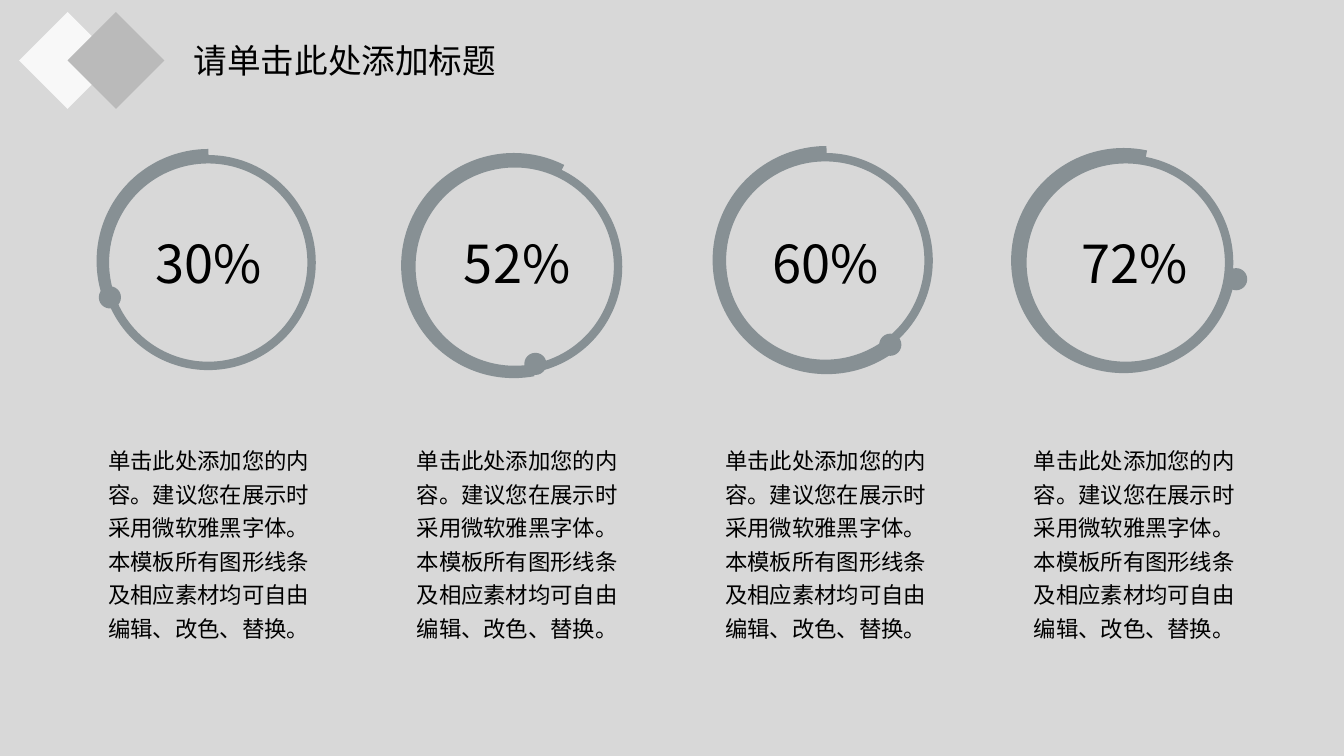
from dataclasses import dataclass

from lxml.etree import SubElement
from pptx import Presentation
from pptx.dml.color import RGBColor as Color
from pptx.enum.shapes import MSO_SHAPE as Preset
from pptx.enum.text import MSO_ANCHOR as Anchor, PP_ALIGN as Align
from pptx.oxml.ns import qn
from pptx.util import Inches, Pt


@dataclass(frozen=True)
class Theme:
    font: str = "Noto Sans CJK SC"
    text: str = "000000"
    page: str = "F8F8F8"
    panel: str = "D8D8D8"
    diamond: str = "BABABA"
    ring: str = "879094"
    title_size: float = 24
    percent_size: float = 37.4
    body_size: float = 16
    ring_width: float = 6


theme = Theme()
WIDTH, HEIGHT = 13.33, 7.5
COLUMN_CENTER, COLUMN_PITCH = 2.07, 3.06
BODY_WIDTH, PERCENT_WIDTH = 2.15, 1.07
RING_SIZE, DOT_SIZE, DIAMOND_SIZE = 2.05, 0.22, 0.68
ADJUSTMENT_PER_DEGREE = 0.6
BODY = "单击此处添加您的内容。建议您在展示时采用微软雅黑字体。本模板所有图形线条及相应素材均可自由编辑、改色、替换。"

# percent, ring corner, dot corner, arc corner, arc size, arc start and end in degrees
gauges = [
    ("30%", (1.04, 1.58), (0.98, 2.84), (1.00, 1.52), 2.14, (160.03, 269.91)),
    ("52%", (4.08, 1.62), (5.20, 3.50), (4.02, 1.56), 2.15, (79.35, 296.67)),
    ("60%", (7.16, 1.56), (8.72, 3.31), (7.11, 1.49), 2.18, (52.92, 269.91)),
    ("72%", (10.14, 1.58), (12.15, 2.66), (10.07, 1.51), 2.15, (10.18, 282.01)),
]

presentation = Presentation()
presentation.slide_width, presentation.slide_height = Inches(WIDTH), Inches(HEIGHT)
slide = presentation.slides.add_slide(presentation.slide_layouts[5])
slide.background.fill.solid()
slide.background.fill.fore_color.rgb = Color.from_string(theme.page)


def add_figure(preset, corner, width, height, fill=None, line=None):
    """Draw a preset shape with a plain fill, a plain outline, or either one."""
    shape = slide.shapes.add_shape(preset, *map(Inches, (*corner, width, height)))
    shape.shadow.inherit = False
    if fill:
        shape.fill.solid()
        shape.fill.fore_color.rgb = Color.from_string(fill)
    else:
        shape.fill.background()
    if line:
        shape.line.color.rgb = Color.from_string(line)
        shape.line.width = Pt(theme.ring_width)
    else:
        shape.line.fill.background()
    return shape


def write_text(shape, text, size, align, margins=(0, 0)):
    """Fill a text shape with one paragraph, using the font for both scripts."""
    frame = shape.text_frame
    frame.word_wrap = True
    frame.vertical_anchor = Anchor.TOP
    frame.margin_left = frame.margin_right = Inches(margins[0])
    frame.margin_top = frame.margin_bottom = Inches(margins[1])
    paragraph = frame.paragraphs[0]
    paragraph.text = text
    paragraph.alignment = align
    font = paragraph.font
    font.size, font.name = Pt(size), theme.font
    font.color.rgb = Color.from_string(theme.text)
    SubElement(font._element, qn("a:ea"), typeface=theme.font)
    return paragraph


add_figure(Preset.RECTANGLE, (0, 0), WIDTH, HEIGHT, fill=theme.panel)
for left, color in ((0.33, theme.page), (0.81, theme.diamond)):
    diamond = add_figure(Preset.RECTANGLE, (left, 0.26), DIAMOND_SIZE, DIAMOND_SIZE, fill=color)
    diamond.rotation = 45

title = slide.shapes.title
title.left, title.top, title.width, title.height = map(Inches, (1.82, 0.35, 5.33, 0.5))
write_text(title, "请单击此处添加标题", theme.title_size, Align.LEFT, (0.1, 0.05))
slide.shapes._spTree.append(title._element)  # bring the title in front of the panel

for column, (percent, ring, dot, arc_corner, arc_size, angles) in enumerate(gauges):
    center = COLUMN_CENTER + column * COLUMN_PITCH
    add_figure(Preset.OVAL, ring, RING_SIZE, RING_SIZE, line=theme.ring)

    body = slide.shapes.add_textbox(
        *map(Inches, (center - BODY_WIDTH / 2, 4.37, BODY_WIDTH, 0.86)))
    paragraph = write_text(body, BODY, theme.body_size, Align.CENTER)
    paragraph.line_spacing = 1.25
    paragraph.space_after = Pt(16)

    label = slide.shapes.add_textbox(
        *map(Inches, (center - PERCENT_WIDTH / 2, 2.29, PERCENT_WIDTH, 0.53)))
    write_text(label, percent, theme.percent_size, Align.CENTER)

    add_figure(Preset.OVAL, dot, DOT_SIZE, DOT_SIZE, fill=theme.ring)
    arc = add_figure(Preset.ARC, arc_corner, arc_size, arc_size, line=theme.ring)
    for index, angle in enumerate(angles):
        arc.adjustments[index] = angle * ADJUSTMENT_PER_DEGREE

presentation.save("out.pptx")
